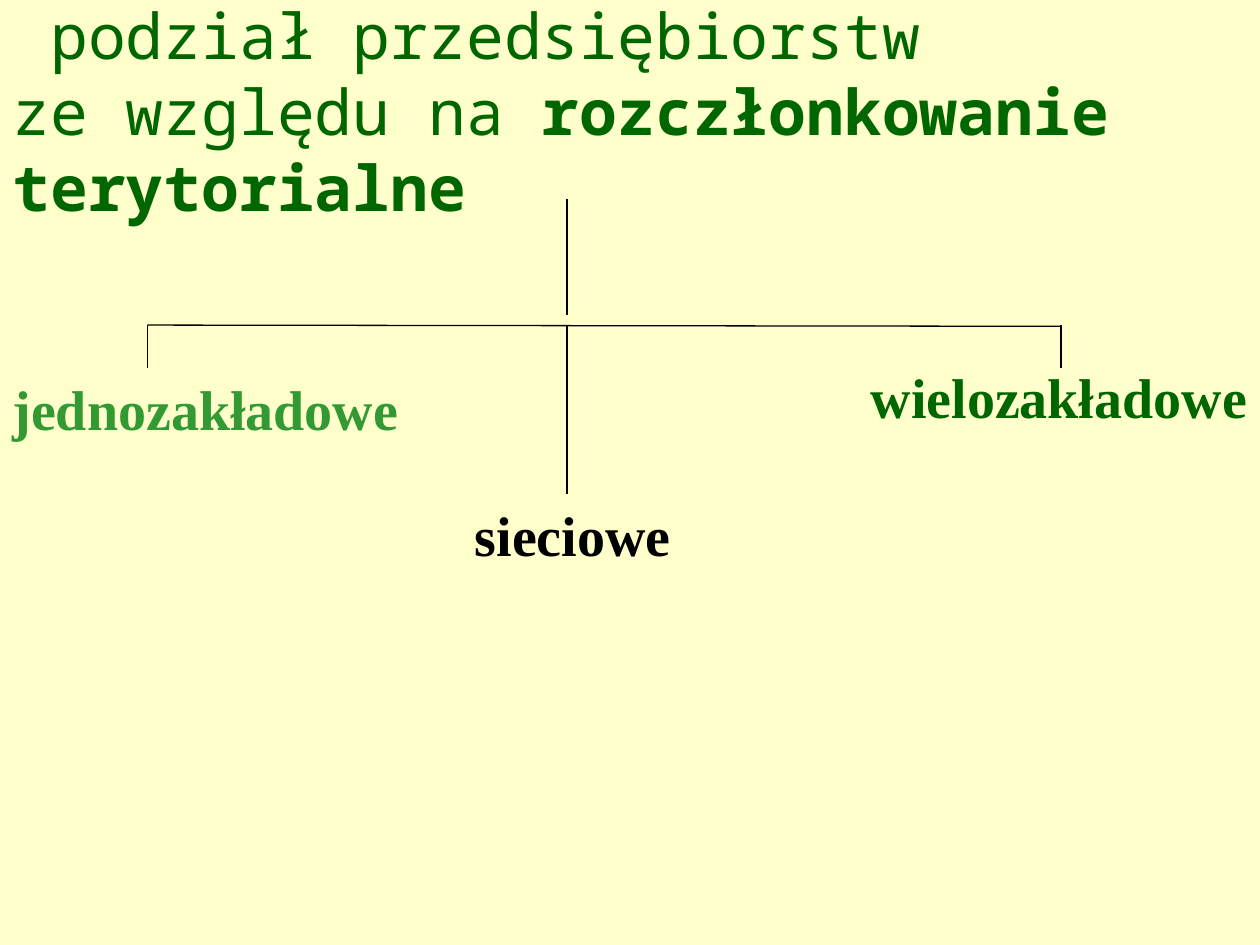
from dataclasses import dataclass

from lxml.etree import SubElement
from pptx import Presentation
from pptx.dml.color import RGBColor
from pptx.enum.shapes import MSO_CONNECTOR as Connector
from pptx.enum.text import MSO_ANCHOR as Anchor, MSO_AUTO_SIZE as AutoSize, PP_ALIGN as Align
from pptx.oxml.ns import qn
from pptx.slide import Slide
from pptx.text.text import _Paragraph as Paragraph
from pptx.util import Inches, Pt


@dataclass(frozen=True)
class Theme:
    background: str = "FFFFCC"
    dark_green: str = "006600"
    light_green: str = "339933"
    black: str = "000000"
    title_font: str = "Noto Sans Mono"
    label_font: str = "Times New Roman"
    title_size: int = 36
    label_size: int = 32
    line_width: float = 0.75


@dataclass(frozen=True)
class Label:
    text: str
    left: float
    top: float
    width: float
    color: str
    align: Align = Align.LEFT


@dataclass(frozen=True)
class Branch:
    start_x: float
    start_y: float
    end_x: float
    end_y: float


THEME = Theme()
LEFT_X, MIDDLE_X, RIGHT_X = 1.17, 4.5, 8.42
BAR_Y, SIDE_Y, MIDDLE_Y = 2.58, 2.92, 3.92
LABEL_HEIGHT = 0.64

LABELS = [
    Label("jednozakładowe", 0, SIDE_Y, 3.5, THEME.light_green),
    Label("wielozakładowe", 6.67, 2.83, 3.33, THEME.dark_green, Align.RIGHT),
    Label("sieciowe", 3.67, MIDDLE_Y, 2.17, THEME.black),
]
BRANCHES = [
    Branch(LEFT_X, BAR_Y, RIGHT_X, BAR_Y + 0.01),
    Branch(MIDDLE_X, 1.58, MIDDLE_X, 2.5),
    Branch(LEFT_X, BAR_Y, LEFT_X, SIDE_Y),
    Branch(RIGHT_X, BAR_Y, RIGHT_X, SIDE_Y),
    Branch(MIDDLE_X, BAR_Y, MIDDLE_X, MIDDLE_Y),
]


def add_run(paragraph: Paragraph, text: str, font: str, size: int, color: str, bold: bool) -> None:
    run = paragraph.add_run()
    run.text = text
    run.font.name = font
    run.font.size = Pt(size)
    run.font.bold = bold
    run.font.color.rgb = RGBColor.from_string(color)


def fill_title(slide: Slide) -> None:
    title = slide.shapes.title
    title.left, title.top = Inches(0), Inches(0.25)
    title.width, title.height = Inches(10), Inches(1.25)
    frame = title.text_frame
    frame.word_wrap = True
    frame.auto_size = AutoSize.NONE
    frame.vertical_anchor = Anchor.MIDDLE
    paragraph = frame.paragraphs[0]
    paragraph.alignment = Align.LEFT
    style = (THEME.title_font, THEME.title_size, THEME.dark_green)
    add_run(paragraph, " podział przedsiębiorstw ", *style, False)
    paragraph.add_line_break()
    add_run(paragraph, "ze względu na", *style, False)
    add_run(paragraph, " rozczłonkowanie terytorialne", *style, True)


def add_label(slide: Slide, label: Label) -> None:
    shape = slide.shapes.add_textbox(
        Inches(label.left), Inches(label.top), Inches(label.width), Inches(LABEL_HEIGHT)
    )
    frame = shape.text_frame
    frame.word_wrap = True
    frame.auto_size = AutoSize.SHAPE_TO_FIT_TEXT
    paragraph = frame.paragraphs[0]
    paragraph.alignment = label.align
    paragraph.space_before = Pt(20)
    add_run(paragraph, label.text, THEME.label_font, THEME.label_size, label.color, True)


def add_branch(slide: Slide, branch: Branch) -> None:
    connector = slide.shapes.add_connector(
        Connector.STRAIGHT,
        Inches(branch.start_x),
        Inches(branch.start_y),
        Inches(branch.end_x),
        Inches(branch.end_y),
    )
    connector.line.color.rgb = RGBColor.from_string(THEME.black)
    connector.line.width = Pt(THEME.line_width)
    SubElement(connector._element.spPr, qn("a:effectLst"))


def main() -> None:
    presentation = Presentation()
    presentation.slide_width, presentation.slide_height = Inches(10), Inches(7.5)
    slide = presentation.slides.add_slide(presentation.slide_layouts.get_by_name("Title Only"))
    background = slide.background.fill
    background.solid()
    background.fore_color.rgb = RGBColor.from_string(THEME.background)
    fill_title(slide)
    for label in LABELS:
        add_label(slide, label)
    for branch in BRANCHES:
        add_branch(slide, branch)
    presentation.save("out.pptx")


if __name__ == "__main__":
    main()
